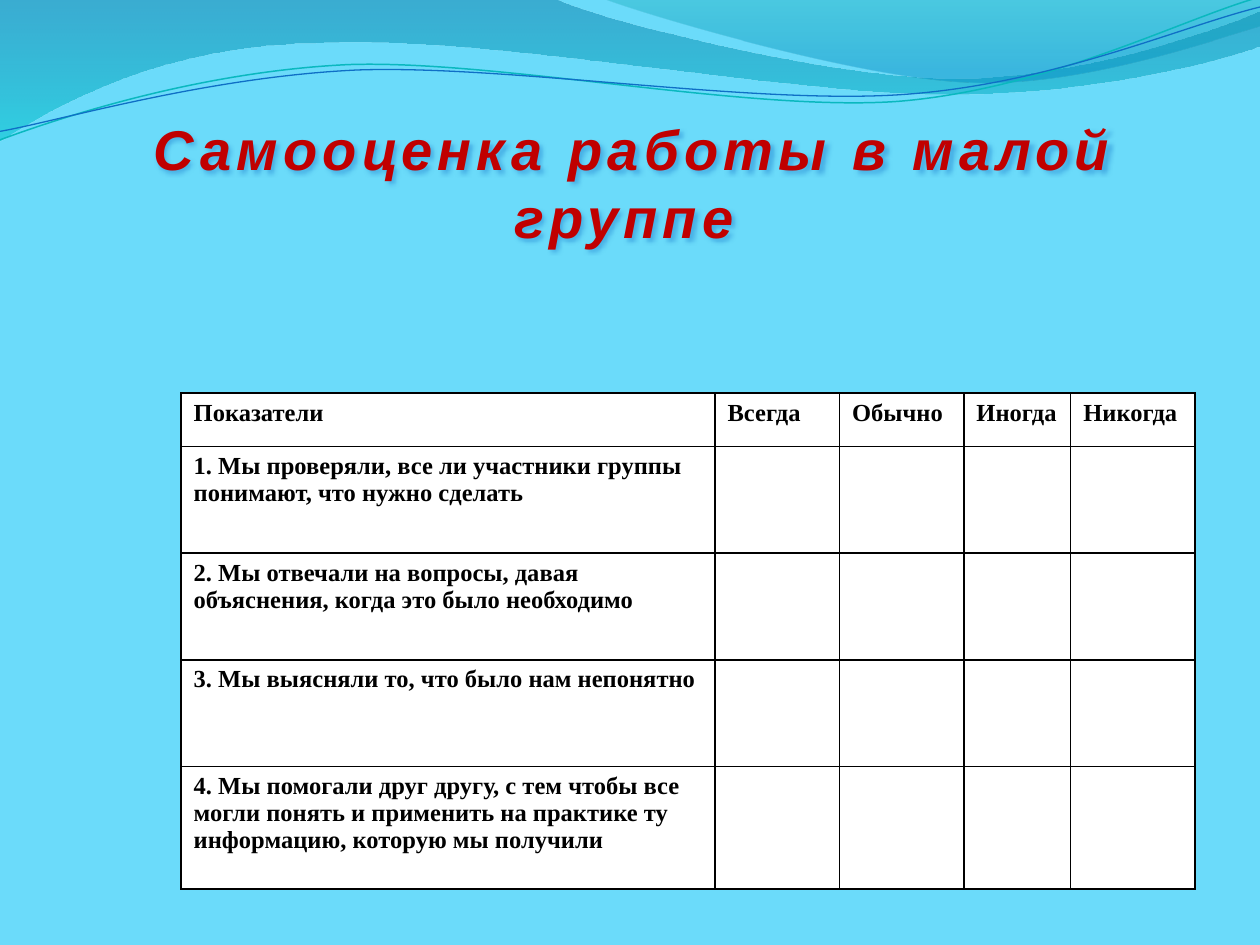
import pptx
import pptx.dml.color
import pptx.enum.text
import pptx.oxml
import pptx.oxml.ns
import pptx.util

Pt = pptx.util.Pt
RGBColor = pptx.dml.color.RGBColor

SKY = RGBColor(0x6B, 0xDB, 0xFA)
DEEP_BLUE = RGBColor(0x00, 0x74, 0xA1)
AQUA = RGBColor(0x00, 0xC6, 0xCF)
TEAL = RGBColor(0x00, 0xA1, 0xA9)
OCEAN = RGBColor(0x00, 0x8B, 0xBF)
TURQUOISE = RGBColor(0x0A, 0xB8, 0xBF)
BLUE = RGBColor(0x0F, 0x6F, 0xC6)
RED = RGBColor(0xC0, 0x00, 0x00)
BLACK = RGBColor(0, 0, 0)
WHITE = RGBColor(0xFF, 0xFF, 0xFF)
PALE = RGBColor(0xF4, 0xF5, 0xFA)

TITLE = "Самооценка работы в малой группе "
HEADERS = ["Показатели", "Всегда", "Обычно", "Иногда", "Никогда"]
INDICATORS = [
    "1. Мы проверяли, все ли участники группы понимают, что нужно сделать",
    "2. Мы отвечали на вопросы, давая объяснения, когда это было необходимо",
    "3. Мы выясняли то, что было нам непонятно",
    "4. Мы помогали друг другу, с тем чтобы все могли понять и применить "
    "на практике ту информацию, которую мы получили",
]
COLUMN_WIDTHS = [305.1, 71.1, 71.1, 61.1, 71.1]
ROW_HEIGHTS = [30.5, 61, 61, 61, 70]

WAVES = [
    {"start": (0, -0.7),
     "segments": [[(317, -0.7)],
                  [(343, 12), (478, 45), (546, 45)],
                  [(614, 45), (690, 19), (720, 6.5)],
                  [(720.7, 26)],
                  [(708, 32), (626, 55), (537, 54)],
                  [(448, 54), (275, 20), (185, 24.5)],
                  [(93, 25), (33, 60), (-0.7, 81)],
                  [(0, -0.7)]],
     "stops": [(0, DEEP_BLUE, 45), (1, AQUA, 55)]},
    {"start": (345, -0.7),
     "segments": [[(367, 8), (491, 45), (554, 47)],
                  [(616, 50), (692, 23), (720, 15)],
                  [(720, 0)],
                  [(345, -0.7)]],
     "stops": [(0, TEAL, 30), (0.8, OCEAN, 45)]},
]
RIPPLE_ROTATION = 357.3
RIPPLES = [
    {"start": (-1.4, 63),
     "segments": [[(34.2, 51.7), (114.3, 29.4), (199.4, 29.4)],
                  [(284.4, 30.5), (425.8, 67.2), (512, 65.2)],
                  [(598.2, 62.3), (676.1, 25.9), (720.6, 15.6)]],
     "color": TURQUOISE, "width": 0.85},
    {"start": (-1.1, 58.1),
     "segments": [[(33.2, 53.7), (118.2, 32.6), (204.3, 32.7)],
                  [(290.3, 33.7), (429.1, 63.3), (515.3, 61.4)],
                  [(601.4, 59.4), (676, 29.9), (721.4, 21)]],
     "color": BLUE, "width": 0.75},
]


def drawing_element(xml):
    namespace = pptx.oxml.ns.nsdecls("a")
    return pptx.oxml.parse_xml(xml.replace(">", f" {namespace}>", 1))


def add_curve(slide, curve, close):
    points = [point for segment in curve["segments"] for point in segment]
    start_x, start_y = curve["start"]
    builder = slide.shapes.build_freeform(Pt(start_x), Pt(start_y))
    builder.add_line_segments([(Pt(x), Pt(y)) for x, y in points], close=close)
    shape = builder.convert_to_shape()
    shape.shadow.inherit = False
    lines = iter(shape._element.findall(".//" + pptx.oxml.ns.qn("a:lnTo")))
    for segment in curve["segments"]:
        members = [next(lines) for point in segment]
        if len(members) == 3:
            bezier = drawing_element("<a:cubicBezTo></a:cubicBezTo>")
            members[0].addprevious(bezier)
            for line in members:
                bezier.append(line[0])
                line.getparent().remove(line)
    return shape


def add_wave(slide, wave):
    shape = add_curve(slide, wave, close=True)
    shape.line.fill.background()
    shape.fill.gradient()
    shape.fill.gradient_angle = 270
    for stop, (position, color, opacity) in zip(shape.fill.gradient_stops, wave["stops"]):
        stop.position = position
        stop.color.rgb = color
        stop._gs[0].append(drawing_element(f'<a:alpha val="{opacity * 1000}"></a:alpha>'))


def add_ripple(slide, ripple):
    shape = add_curve(slide, ripple, close=False)
    shape.rotation = RIPPLE_ROTATION
    shape.fill.background()
    shape.line.color.rgb = ripple["color"]
    shape.line.width = Pt(ripple["width"])


def set_font(paragraph, name, size, color, italic=False):
    font = paragraph.font
    font.name = name
    font.size = Pt(size)
    font.bold = True
    font.italic = italic
    font.color.rgb = color


def format_title(slide):
    title = slide.shapes.title
    title.left, title.top, title.width, title.height = Pt(22.3), Pt(61.6), Pt(680.4), Pt(85)
    frame = title.text_frame
    frame.text = TITLE
    frame.word_wrap = True
    frame.auto_size = pptx.enum.text.MSO_AUTO_SIZE.SHAPE_TO_FIT_TEXT
    paragraph = frame.paragraphs[0]
    paragraph.alignment = pptx.enum.text.PP_ALIGN.CENTER
    set_font(paragraph, "Arial", 32, RED, italic=True)
    properties = paragraph.runs[0]._r.get_or_add_rPr()
    properties.set("spc", "300")
    properties.append(drawing_element(
        f'<a:ln w="{Pt(0.9)}"><a:solidFill><a:srgbClr val="{PALE}"/></a:solidFill></a:ln>'))
    title._element.spPr.append(drawing_element(
        f'<a:effectLst><a:outerShdw blurRad="{Pt(2)}" dist="{Pt(1.5)}" dir="2700000">'
        f'<a:srgbClr val="{BLUE}"><a:alpha val="40000"/></a:srgbClr>'
        '</a:outerShdw></a:effectLst>'))
    slide.shapes._spTree.append(title._element)


def add_borders(cell):
    properties = cell._tc.get_or_add_tcPr()
    for side in "LRTB":
        properties.append(drawing_element(
            f'<a:ln{side} w="{Pt(1)}"><a:solidFill><a:srgbClr val="{BLACK}"/>'
            f'</a:solidFill></a:ln{side}>'))


def add_assessment_table(slide):
    rows = [HEADERS] + [[text] + [""] * (len(HEADERS) - 1) for text in INDICATORS]
    table = slide.shapes.add_table(
        len(rows), len(HEADERS), Pt(103.5), Pt(224.6),
        Pt(sum(COLUMN_WIDTHS)), Pt(sum(ROW_HEIGHTS))).table
    table.first_row = False
    table.horz_banding = False
    for column, width in zip(table.columns, COLUMN_WIDTHS):
        column.width = Pt(width)
    for row, height, texts in zip(table.rows, ROW_HEIGHTS, rows):
        row.height = Pt(height)
        for cell, text in zip(row.cells, texts):
            if text:
                cell.text = text
                set_font(cell.text_frame.paragraphs[0], "Times New Roman", 14, BLACK)
            add_borders(cell)
            cell.fill.solid()
            cell.fill.fore_color.rgb = WHITE


def main():
    presentation = pptx.Presentation()
    presentation.slide_width, presentation.slide_height = Pt(720), Pt(540)
    slide = presentation.slides.add_slide(presentation.slide_layouts[5])
    slide.background.fill.solid()
    slide.background.fill.fore_color.rgb = SKY
    for wave in WAVES:
        add_wave(slide, wave)
    for ripple in RIPPLES:
        add_ripple(slide, ripple)
    add_assessment_table(slide)
    format_title(slide)
    presentation.save("out.pptx")


if __name__ == "__main__":
    main()
